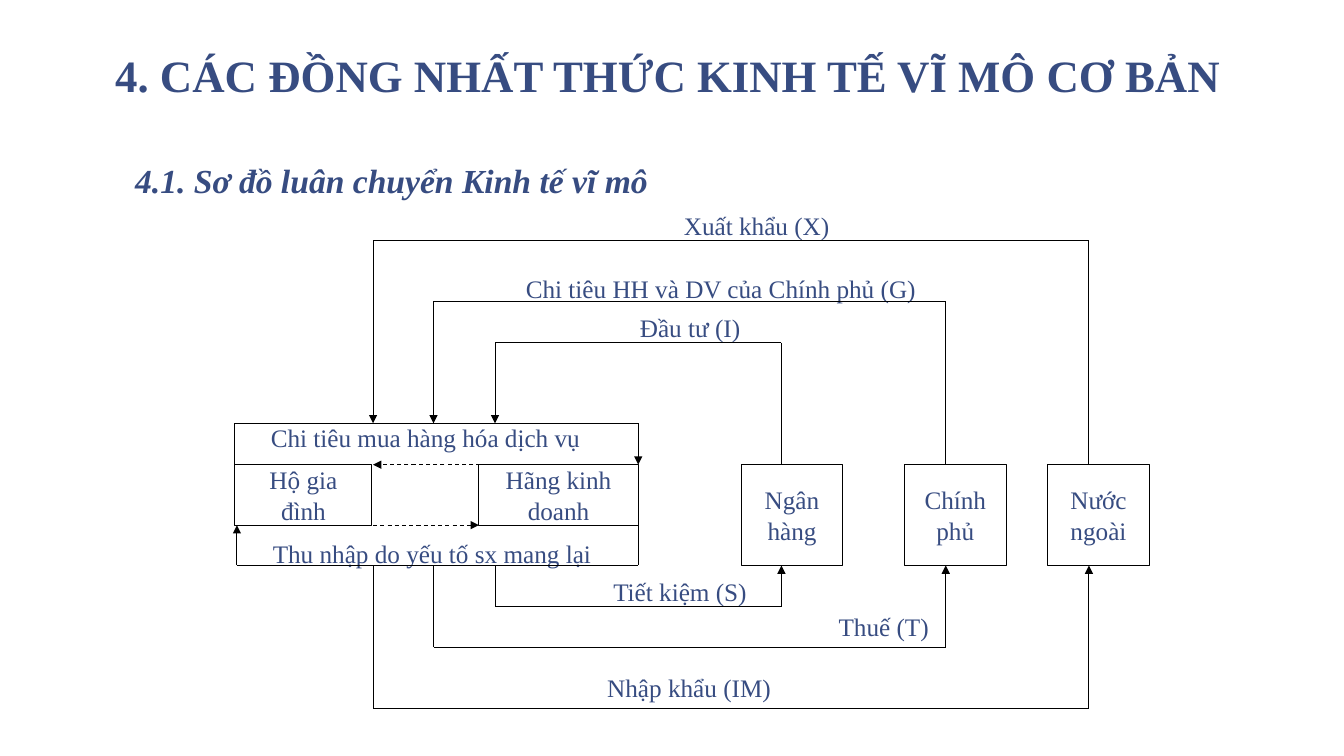
from lxml import etree
from pptx import Presentation
from pptx.dml.color import RGBColor
from pptx.enum.dml import MSO_LINE
from pptx.enum.shapes import MSO_CONNECTOR, MSO_SHAPE
from pptx.enum.text import MSO_ANCHOR, MSO_AUTO_SIZE, PP_ALIGN
from pptx.oxml.ns import qn
from pptx.util import Inches, Pt

NAVY = RGBColor(0x37, 0x4C, 0x81)
BLACK = RGBColor(0, 0, 0)
WHITE = RGBColor(0xFF, 0xFF, 0xFF)
FONT = "Times New Roman"
CENTER = PP_ALIGN.CENTER
STRAIGHT = MSO_CONNECTOR.STRAIGHT

# Horizontal levels of the diagram, in inches
LOOP_TOP, BOX_TOP, BOX_MIDDLE, LOOP_BOTTOM = 4.2, 4.61, 5.21, 5.61
LOOP_LEFT, LOOP_RIGHT = 2.33, 6.33

presentation = Presentation()
presentation.slide_width = Inches(13.33)
presentation.slide_height = Inches(7.5)
slide = presentation.slides.add_slide(presentation.slide_layouts[1])
slide.background.fill.solid()
slide.background.fill.fore_color.rgb = WHITE


def write(shape, text, size=18, align=CENTER, anchor=MSO_ANCHOR.TOP):
    frame = shape.text_frame
    frame.word_wrap = True
    frame.auto_size = MSO_AUTO_SIZE.NONE
    frame.vertical_anchor = anchor
    frame.text = text
    paragraph = frame.paragraphs[0]
    paragraph.alignment = align
    paragraph.font.name = FONT
    paragraph.font.size = Pt(size)
    paragraph.font.color.rgb = NAVY
    return paragraph


def draw_path(points, arrow=False, dashed=False):
    """Join the points with straight lines; the arrowhead ends the last one."""
    for start, end in zip(points, points[1:]):
        connector = slide.shapes.add_connector(
            STRAIGHT, *[Inches(value) for value in start + end])
        connector.line.color.rgb = BLACK
        connector.line.width = Pt(0.75)
        if dashed:
            connector.line.dash_style = MSO_LINE.DASH
        if arrow and end == points[-1]:
            outline = connector.line._get_or_add_ln()
            etree.SubElement(outline, qn("a:tailEnd"), type="triangle")
        etree.SubElement(connector._element.spPr, qn("a:effectLst"))


# Title and subtitle
title, body = slide.shapes.title, slide.placeholders[1]
for placeholder, area in ((title, (0.25, 0.08, 12.75, 1)),
                          (body, (1.21, 1.58, 11.11, 5.25))):
    (placeholder.left, placeholder.top,
     placeholder.width, placeholder.height) = map(Inches, area)
    frame = placeholder.text_frame
    frame.margin_left = frame.margin_right = Inches(0.13)
    frame.margin_top = frame.margin_bottom = Inches(0.07)

heading = write(title, "4. CÁC ĐỒNG NHẤT THỨC KINH TẾ VĨ MÔ CƠ BẢN", 32,
                anchor=MSO_ANCHOR.BOTTOM)
heading.line_spacing = 0.85
heading.font.bold = True

subtitle = write(body, "4.1. Sơ đồ luân chuyển Kinh tế vĩ mô", 24, PP_ALIGN.LEFT)
properties = subtitle._p.get_or_add_pPr()
properties.set("marL", "0")
properties.set("indent", "0")
etree.SubElement(properties, qn("a:buNone"))
subtitle.line_spacing = Pt(24)
subtitle.space_before = Pt(0)
subtitle.font.bold = subtitle.font.italic = True

# Flow labels: text, left, top, width, height
labels = [
    ("Nhập khẩu (IM)", 5.82, 6.62, 2.03, 0.6),
    ("Thuế (T)", 7.75, 6.02, 2.03, 0.6),
    ("Chi tiêu mua hàng hóa dịch vụ", 2.4, 4.14, 3.64, 0.45),
    ("Thu nhập do yếu tố sx mang lại", 2.53, 5.29, 3.51, 0.6),
    ("Đầu tư (I)", 5.83, 3.05, 2.03, 0.34),
    ("Chi tiêu HH và DV của Chính phủ (G)", 4.92, 2.66, 4.46, 0.33),
    ("Xuất khẩu (X)", 6.49, 2.04, 2.03, 0.6),
    ("Tiết kiệm (S)", 5.73, 5.67, 2.03, 0.6),
]
for text, *area in labels:
    write(slide.shapes.add_textbox(*map(Inches, area)), text)

# Economic agents: text, left, width, bottom
agents = [
    ("Hộ gia đình", LOOP_LEFT, 1.36, BOX_MIDDLE),
    ("Hãng kinh doanh", 4.75, 1.58, BOX_MIDDLE),
    ("Ngân hàng", 7.35, 1.01, LOOP_BOTTOM),
    ("Chính phủ", 8.97, 1.01, LOOP_BOTTOM),
    ("Nước ngoài", 10.39, 1.01, LOOP_BOTTOM),
]
for text, left, width, bottom in agents:
    box = slide.shapes.add_shape(
        MSO_SHAPE.RECTANGLE, Inches(left), Inches(BOX_TOP),
        Inches(width), Inches(bottom - BOX_TOP))
    box.shadow.inherit = False
    box.fill.background()
    box.line.color.rgb = BLACK
    box.line.width = Pt(0.75)
    write(box, text, anchor=MSO_ANCHOR.MIDDLE)

# Loop between households and firms
draw_path([(4.91, BOX_TOP), (3.7, BOX_TOP)], arrow=True, dashed=True)
draw_path([(3.7, BOX_MIDDLE), (4.75, BOX_MIDDLE)], arrow=True, dashed=True)
draw_path([(LOOP_LEFT, BOX_TOP), (LOOP_LEFT, LOOP_TOP),
           (LOOP_RIGHT, LOOP_TOP), (LOOP_RIGHT, BOX_TOP)], arrow=True)
draw_path([(LOOP_RIGHT, BOX_MIDDLE), (LOOP_RIGHT, LOOP_BOTTOM),
           (2.35, LOOP_BOTTOM), (2.35, BOX_MIDDLE)], arrow=True)

# Injections above and leakages below: loop x, agent x, upper y, lower y
for loop_x, agent_x, upper, lower in ((3.7, 10.8, 2.39, 7.03),
                                      (4.3, 9.38, 2.99, 6.42),
                                      (4.91, 7.75, 3.4, 6.02)):
    draw_path([(agent_x, BOX_TOP), (agent_x, upper),
               (loop_x, upper), (loop_x, LOOP_TOP)], arrow=True)
    draw_path([(loop_x, LOOP_BOTTOM), (loop_x, lower),
               (agent_x, lower), (agent_x, LOOP_BOTTOM)], arrow=True)

presentation.save("out.pptx")
